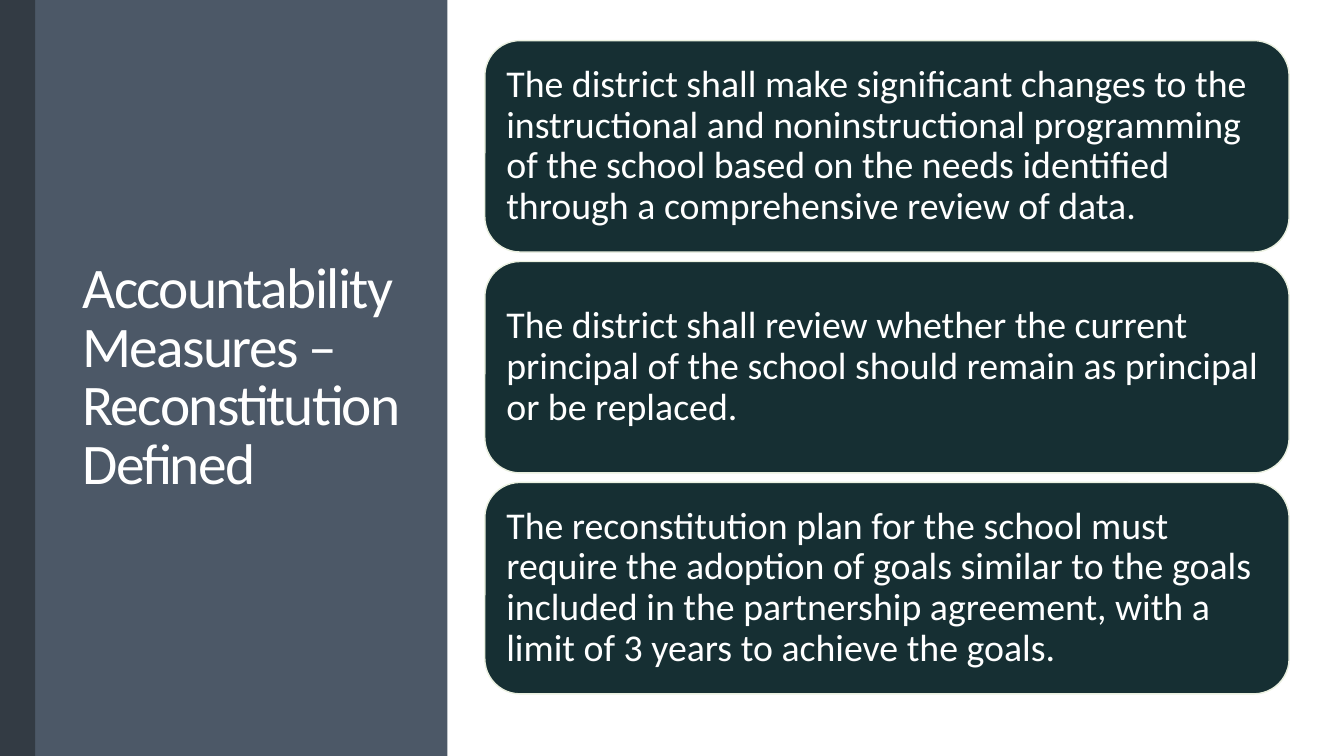
"""Build the slide that defines reconstitution as an accountability measure."""
from pptx import Presentation
from pptx.dml.color import RGBColor
from pptx.enum.shapes import MSO_SHAPE
from pptx.enum.text import MSO_ANCHOR, PP_ALIGN
from pptx.util import Pt


def color(hex_string):
    return RGBColor.from_string(hex_string)


def set_text(box, text, size, line_spacing):
    frame = box.text_frame
    frame.word_wrap = True
    frame.vertical_anchor = MSO_ANCHOR.MIDDLE
    frame.text = text
    para = frame.paragraphs[0]
    para.alignment = PP_ALIGN.LEFT
    para.line_spacing = line_spacing
    for span in para.runs:
        span.font.name = "Calibri"
        span.font.size = Pt(size)
        span.font.color.rgb = color("FFFFFF")


deck = Presentation()
deck.slide_width = Pt(960)
deck.slide_height = Pt(540)
page = deck.slides.add_slide(deck.slide_layouts[6])

for width, fill in [(319.68, "4C5867"), (25.2, "333B44")]:
    panel = page.shapes.add_shape(MSO_SHAPE.RECTANGLE, 0, 0, Pt(width), Pt(540))
    panel.shadow.inherit = False
    panel.fill.solid()
    panel.fill.fore_color.rgb = color(fill)
    panel.line.fill.background()

title = page.shapes.add_textbox(Pt(51.84), Pt(78.5), Pt(241.2), Pt(384.5))
set_text(title, "Accountability Measures – \vReconstitution Defined", 41, 0.85)
for span in title.text_frame.paragraphs[0].runs:
    span._r.get_or_add_rPr().set("spc", "-120")

requirements = [
    "The district shall make significant changes to the instructional and "
    "noninstructional programming of the school based on the needs identified "
    "through a comprehensive review of data.",
    "The district shall review whether the current principal of the school "
    "should remain as principal or be replaced.",
    "The reconstitution plan for the school must require the adoption of goals "
    "similar to the goals included in the partnership agreement, with a limit "
    "of 3 years to achieve the goals.",
]
card_top, card_height, card_gap = 29, 151, 6.8

for index, requirement in enumerate(requirements):
    top = card_top + index * (card_height + card_gap)
    card = page.shapes.add_shape(
        MSO_SHAPE.ROUNDED_RECTANGLE, Pt(346.3), Pt(top), Pt(574.5), Pt(card_height)
    )
    card.shadow.inherit = False
    card.fill.solid()
    card.fill.fore_color.rgb = color("162F33")
    card.line.color.rgb = color("EAF0E0")
    card.line.width = Pt(1)
    frame = card.text_frame
    frame.margin_left = frame.margin_right = Pt(8)
    frame.margin_top = frame.margin_bottom = Pt(8)
    set_text(card, requirement, 27, 0.9)

deck.save("out.pptx")
